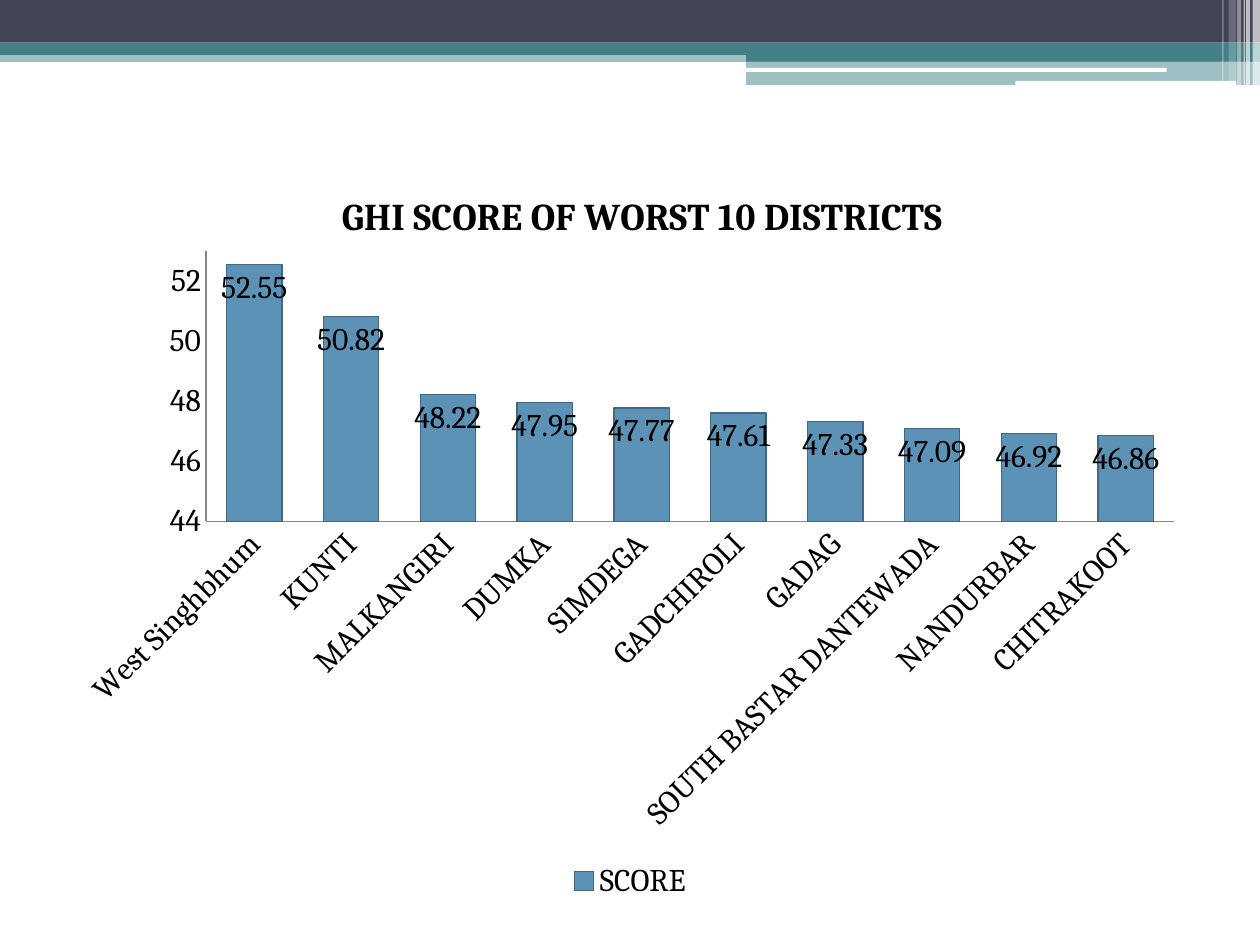
"""Build a slide with a column chart of the ten worst district GHI scores."""
from lxml import etree
from pptx import Presentation
from pptx.chart.data import CategoryChartData
from pptx.dml.color import RGBColor
from pptx.enum.chart import (XL_CHART_TYPE, XL_LABEL_POSITION,
                             XL_LEGEND_POSITION, XL_TICK_MARK)
from pptx.enum.shapes import MSO_SHAPE
from pptx.oxml.ns import qn
from pptx.util import Cm, Pt

COLUMN = XL_CHART_TYPE.COLUMN_CLUSTERED
INSIDE_END = XL_LABEL_POSITION.INSIDE_END
BOTTOM = XL_LEGEND_POSITION.BOTTOM
NO_TICK = XL_TICK_MARK.NONE
RECT = MSO_SHAPE.RECTANGLE
ROUNDED = MSO_SHAPE.ROUNDED_RECTANGLE

BLACK = RGBColor(0x00, 0x00, 0x00)
WHITE = RGBColor(0xFF, 0xFF, 0xFF)
SLATE = RGBColor(0x42, 0x44, 0x56)
TEAL = RGBColor(0x43, 0x80, 0x86)
BLUE = RGBColor(0x5C, 0x92, 0xB5)
DARK_BLUE = RGBColor(0x41, 0x68, 0x82)
GRAY = RGBColor(0x87, 0x87, 0x87)

FONT = "Cambria"
WIDTH, HEIGHT = 25.4, 19.05
PANEL_LEFT = 15.04
PANEL_WIDTH = WIDTH - PANEL_LEFT

BANDS = [
    (RECT, 0, 1.02, WIDTH, 0.23, TEAL, 50),
    (RECT, 0, 0, WIDTH, 0.86, SLATE, 100),
    (RECT, 0, 0.86, WIDTH, 0.25, TEAL, 100),
    (RECT, PANEL_LEFT, 0.99, PANEL_WIDTH, 0.25, TEAL, 100),
    (RECT, PANEL_LEFT, 1.23, PANEL_WIDTH, 0.49, TEAL, 50),
    (ROUNDED, 15.01, 1.37, 8.51, 0.08, WHITE, 100),
    (ROUNDED, 20.47, 1.63, 4.45, 0.1, WHITE, 100),
]
STRIPES = [
    (25.25, 0.15, 1.73, 65),
    (25.12, 0.08, 1.73, 65),
    (25.07, 0.03, 1.73, 60),
    (24.94, 0.08, 1.73, 40),
    (24.77, 0.15, 1.63, 20),
    (24.64, 0.03, 1.63, 30),
]
SCORES = {
    "West Singhbhum": 52.55,
    "KUNTI": 50.82,
    "MALKANGIRI": 48.22,
    "DUMKA": 47.95,
    "SIMDEGA": 47.77,
    "GADCHIROLI": 47.61,
    "GADAG": 47.33,
    "SOUTH BASTAR DANTEWADA": 47.09,
    "NANDURBAR": 46.92,
    "CHITRAKOOT": 46.86,
}


def write(tf, text, size=18, bold=False, color=BLACK):
    r = tf.paragraphs[0].add_run()
    r.text = text
    r.font.name = FONT
    r.font.size = Pt(size)
    r.font.bold = bold
    r.font.color.rgb = color


def place(element, index, inner=False, **fractions):
    layout = element.find(qn("c:layout"))
    if layout is None:
        layout = etree.Element(qn("c:layout"))
        element.insert(index, layout)
    manual = etree.SubElement(layout, qn("c:manualLayout"))
    settings = {"xMode": "edge", "yMode": "edge", **fractions}
    if inner:
        settings = {"layoutTarget": "inner", **settings}
    for name, value in settings.items():
        etree.SubElement(manual, qn(f"c:{name}"), val=str(value))


class Deck:
    def __init__(self, prs, slide):
        self.prs = prs
        self.s = slide

    def block(self, shape, left, top, width, height, color, opacity=100):
        sp = self.s.shapes.add_shape(shape, Cm(left), Cm(top), Cm(width), Cm(height))
        sp.shadow.inherit = False
        sp.fill.solid()
        sp.fill.fore_color.rgb = color
        sp.line.fill.background()
        if opacity < 100:
            clr = sp.fill._xPr.find(qn("a:solidFill"))[0]
            etree.SubElement(clr, qn("a:alpha"), val=str(opacity * 1000))

    def column_chart(self, title, name, scores, left, top, width, height):
        data = CategoryChartData()
        data.categories = list(scores)
        data.add_series(name, list(scores.values()))
        chart = self.s.shapes.add_chart(
            COLUMN, Cm(left), Cm(top), Cm(width), Cm(height), data).chart
        chart.font.name = FONT
        chart.font.size = Pt(18)
        chart.font.color.rgb = BLACK
        chart.has_title = True
        write(chart.chart_title.text_frame, title, size=21.6, bold=True)
        place(chart.chart_title._element, 1, x=0.24, y=0.05)
        place(chart._chartSpace.chart.plotArea, 0, inner=True,
              x=0.126, y=0.137, w=0.854, h=0.356)
        chart.has_legend = True
        chart.legend.position = BOTTOM
        chart.legend.include_in_layout = False
        self.style_columns(chart.plots[0])
        self.style_axes(chart.category_axis, chart.value_axis)

    def style_columns(self, plot):
        plot.gap_width = 75
        plot.overlap = -25
        plot.vary_by_categories = False
        fmt = plot.series[0].format
        fmt.fill.solid()
        fmt.fill.fore_color.rgb = BLUE
        fmt.line.color.rgb = DARK_BLUE
        fmt.line.width = Pt(0.75)
        plot.has_data_labels = True
        labels = plot.data_labels
        labels.show_value = True
        labels.position = INSIDE_END

    def style_axes(self, categories, values):
        for axis in (categories, values):
            axis.major_tick_mark = axis.minor_tick_mark = NO_TICK
            axis.has_major_gridlines = False
            axis.format.line.color.rgb = GRAY
            axis.format.line.width = Pt(0.75)
            axis.tick_labels.font.size = Pt(18)
        values.minimum_scale, values.maximum_scale = 44, 53
        values.major_unit = 2
        body = categories._element.find(qn("c:txPr")).find(qn("a:bodyPr"))
        body.set("rot", "-2700000")
        body.set("vert", "horz")


def main():
    prs = Presentation()
    prs.slide_width, prs.slide_height = Cm(WIDTH), Cm(HEIGHT)
    deck = Deck(prs, prs.slides.add_slide(prs.slide_layouts[6]))
    for band in BANDS:
        deck.block(*band)
    for left, width, height, opacity in STRIPES:
        deck.block(RECT, left, 0, width, height, WHITE, opacity)
    deck.column_chart("GHI SCORE OF WORST 10 DISTRICTS", "SCORE", SCORES,
                      1.27, 2.97, 22.86, 15.29)
    prs.save("out.pptx")


if __name__ == "__main__":
    main()
